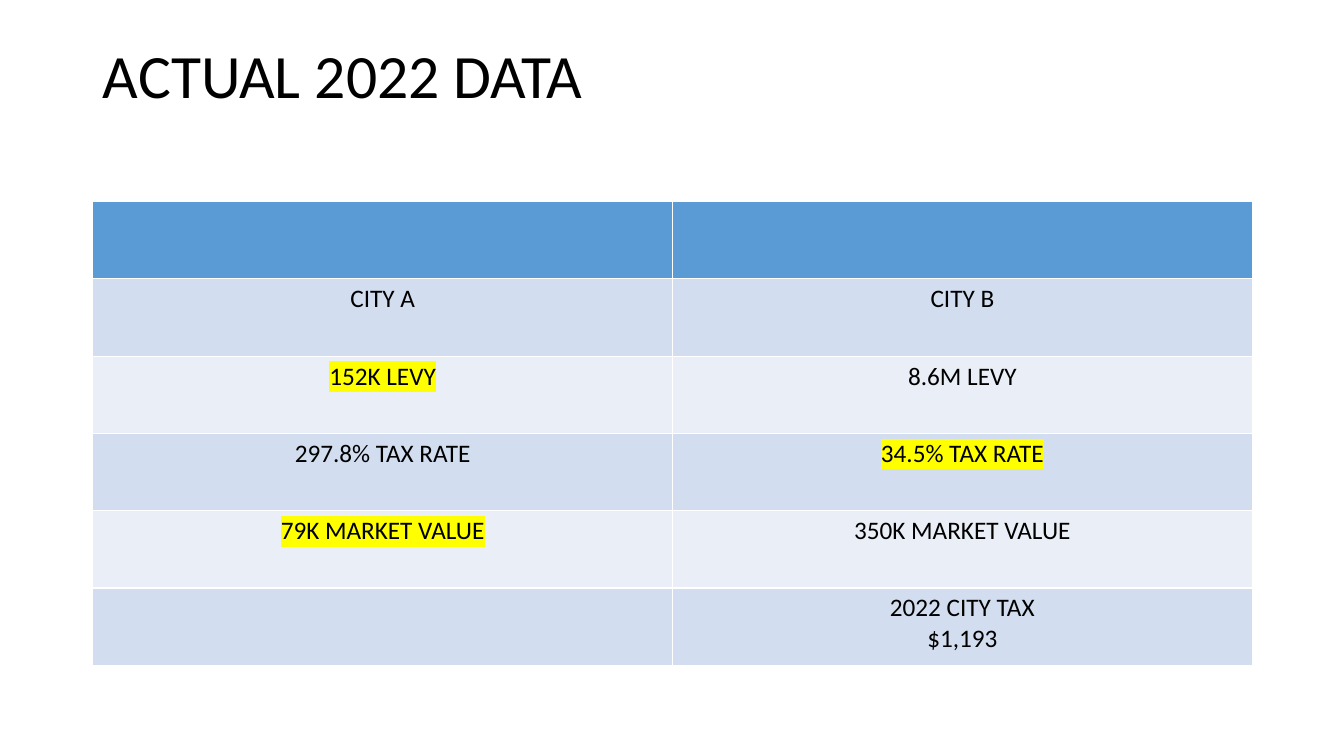
"""Build a slide with a table comparing two cities' 2022 tax data."""
from lxml import etree
from pptx import Presentation
from pptx.dml.color import RGBColor
from pptx.enum.text import MSO_ANCHOR, PP_ALIGN
from pptx.oxml.ns import qn
from pptx.util import Inches, Pt

LEFT, CENTER, TOP = PP_ALIGN.LEFT, PP_ALIGN.CENTER, MSO_ANCHOR.TOP

TITLE = "ACTUAL 2022 DATA"
ROWS = [
    ("", ""),
    ("CITY A", "CITY B"),
    ("152K LEVY", "8.6M LEVY"),
    ("297.8% TAX RATE", "34.5% TAX RATE"),
    ("79K MARKET VALUE", "350K MARKET VALUE"),
    ("", "2022 CITY TAX\n$1,193"),
]
MARKED = {"152K LEVY", "34.5% TAX RATE", "79K MARKET VALUE"}
HEAD, BANDS = "5B9BD5", ("EAEFF7", "D2DEEF")
BLACK, YELLOW = "000000", "FFFF00"
X, WIDTH = 0.92, 11.5


def color(code):
    return RGBColor.from_string(code)


def style(para, size, align):
    para.alignment = align
    para.font.name = "Calibri"
    para.font.size = Pt(size)
    para.font.color.rgb = color(BLACK)


def mark(run):
    light = etree.SubElement(run.font._element, qn("a:highlight"))
    etree.SubElement(light, qn("a:srgbClr"), val=YELLOW)


def place(shape, x, y, w, h):
    shape.left, shape.top = Inches(x), Inches(y)
    shape.width, shape.height = Inches(w), Inches(h)


def add_title(slide):
    title = slide.shapes.title
    place(title, X, 0.4, WIDTH, 1.45)
    frame = title.text_frame
    frame.text = TITLE
    frame.vertical_anchor = TOP
    para = frame.paragraphs[0]
    para.line_spacing = 0.9
    style(para, 44, LEFT)


def add_grid(slide):
    grid = slide.shapes.add_table(
        len(ROWS), len(ROWS[0]), Inches(X), Inches(2), Inches(WIDTH), Inches(4.6)
    ).table
    for r, row in enumerate(ROWS):
        for c, text in enumerate(row):
            cell = grid.cell(r, c)
            cell.fill.solid()
            cell.fill.fore_color.rgb = color(BANDS[r % 2] if r else HEAD)
            cell.text = text
            for para in cell.text_frame.paragraphs:
                style(para, 18, CENTER)
                if text in MARKED:
                    mark(para.runs[0])


def main():
    deck = Presentation()
    deck.slide_width, deck.slide_height = Inches(13.33), Inches(7.5)
    slide = deck.slides.add_slide(deck.slide_layouts[5])
    add_title(slide)
    add_grid(slide)
    deck.save("out.pptx")


if __name__ == "__main__":
    main()
